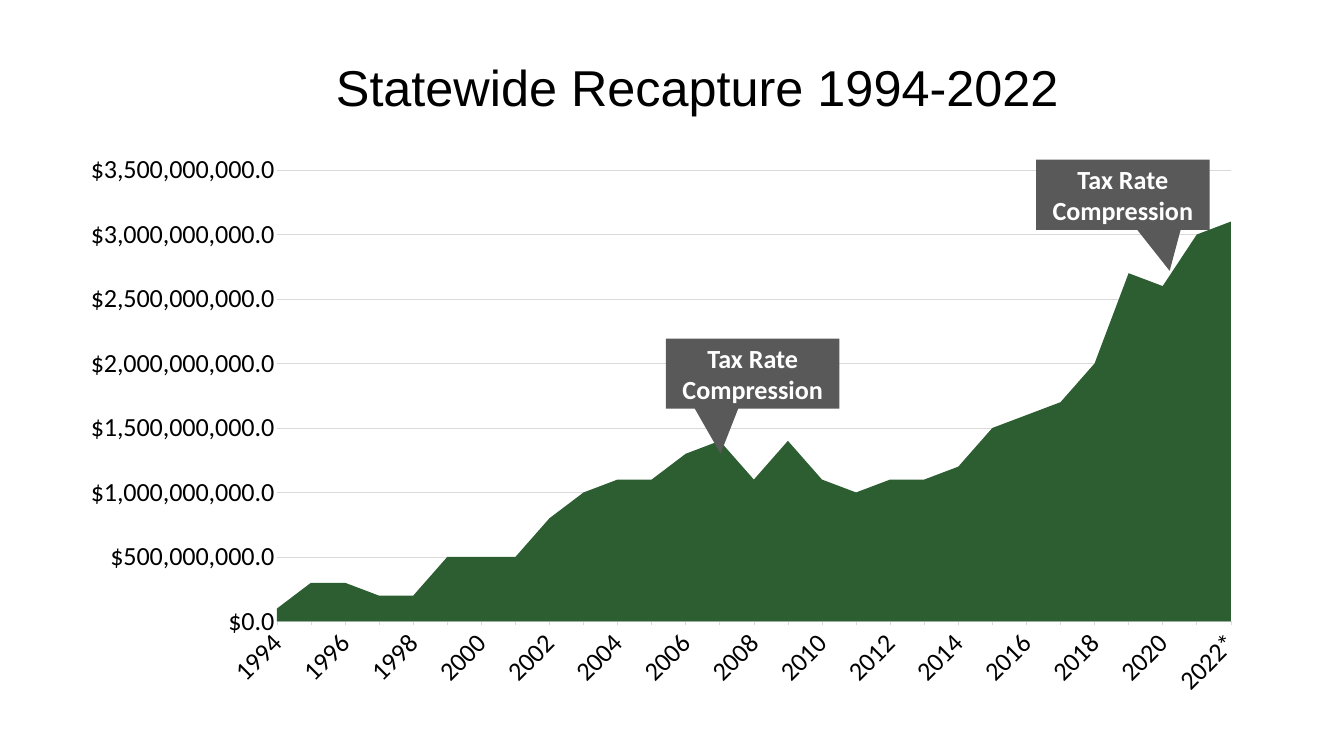
from pptx import Presentation
from pptx.chart.data import CategoryChartData as Data
from pptx.dml.color import RGBColor as RGB
from pptx.enum.chart import XL_CHART_TYPE as Kind, XL_TICK_MARK as Tick
from pptx.enum.shapes import MSO_SHAPE as Form
from pptx.enum.text import MSO_ANCHOR as Anchor, PP_ALIGN as Align
from pptx.oxml import parse_xml
from pptx.oxml.ns import nsdecls
from pptx.util import Cm, Pt

HUES = {"ink": "000000", "area": "2C5E32", "note": "595959", "grid": "D9D9D9", "paper": "FFFFFF"}
YEARS = [str(year) for year in range(1994, 2022)] + ["2022*"]
MILLIONS = [
    100, 300, 300, 200, 200, 500, 500, 500, 800, 1000,
    1100, 1100, 1300, 1400, 1100, 1400, 1100, 1000, 1100, 1100,
    1200, 1500, 1600, 1700, 2000, 2700, 2600, 3000, 3100,
]


def hue(name):
    return RGB.from_string(HUES[name])


def style(font, face, size, tint, bold=False):
    font.name, font.size, font.bold = face, Pt(size), bold
    font.color.rgb = hue(tint)


def write(shape, text, face, size, tint, bold=False):
    frame = shape.text_frame
    frame.word_wrap = True
    frame.vertical_anchor = Anchor.MIDDLE
    frame.margin_top = frame.margin_bottom = 0
    line = frame.paragraphs[0]
    line.alignment = Align.CENTER
    run = line.add_run()
    run.text = text
    style(run.font, face, size, tint, bold)


def add_title(slide, box):
    title = slide.shapes.title
    title.left, title.top, title.width, title.height = [Cm(n) for n in box]
    write(title, "Statewide Recapture 1994-2022", "Arial", 54, "ink")


def rule(form):
    form.line.color.rgb = hue("grid")
    form.line.width = Pt(0.75)


def set_plot(chart, x, y, w, h):
    area = chart.plots[0]._element.getparent()
    for old in area.xpath("c:layout"):
        area.remove(old)
    spots = "".join(f'<c:{tag} val="{val}"/>' for tag, val in zip("xywh", (x, y, w, h)))
    area.insert(0, parse_xml(
        f'<c:layout {nsdecls("c")}><c:manualLayout><c:layoutTarget val="inner"/>'
        f'<c:xMode val="edge"/><c:yMode val="edge"/>{spots}</c:manualLayout></c:layout>'))


def add_graph(slide, box):
    data = Data(number_format="General")
    data.categories = YEARS
    data.add_series("Series 1", [n * 10**6 for n in MILLIONS])
    chart = slide.shapes.add_chart(Kind.AREA_STACKED, *[Cm(n) for n in box], data).chart
    chart.has_legend = chart.has_title = False
    style(chart.font, "Calibri", 10, "ink")
    plot = chart.plots[0]
    plot.vary_by_categories = False
    fill = plot.series[0].format.fill
    fill.solid()
    fill.fore_color.rgb = hue("area")

    years, money = chart.category_axis, chart.value_axis
    for axis in (years, money):
        axis.minor_tick_mark = Tick.NONE
        style(axis.tick_labels.font, "Calibri", 28, "ink")
    years.has_major_gridlines = False
    years.major_tick_mark = Tick.OUTSIDE
    rule(years.format)
    years._element.txPr.bodyPr.set("rot", "-2700000")
    last = years._element.xpath("c:noMultiLvlLbl")[0]
    last.addprevious(parse_xml(f'<c:tickLblSkip {nsdecls("c")} val="2"/>'))

    money.minimum_scale, money.maximum_scale, money.major_unit = 0, 3.5e9, 5e8
    money.major_tick_mark = Tick.NONE
    money.has_major_gridlines = True
    rule(money.major_gridlines.format)
    money.format.line.fill.background()
    money.tick_labels.number_format = '"$"#,##0.0'
    money.tick_labels.number_format_is_linked = False
    for cross in money._element.xpath("c:crossBetween"):
        cross.set("val", "midCat")
    set_plot(chart, 0.175, 0.049, 0.796, 0.798)


def add_note(slide, box, tip):
    note = slide.shapes.add_shape(Form.RECTANGULAR_CALLOUT, *[Cm(n) for n in box])
    note.shadow.inherit = False
    note.fill.solid()
    note.fill.fore_color.rgb = hue("note")
    note.line.fill.background()
    for i, shift in enumerate(tip):
        note.adjustments[i] = shift
    write(note, "Tax Rate Compression", "Calibri", 28, "paper", True)


def main():
    deck = Presentation()
    deck.slide_width, deck.slide_height = Cm(50.8), Cm(28.58)
    slide = deck.slides.add_slide(deck.slide_layouts[5])
    add_title(slide, (5.72, 1.98, 41.28, 2.57))
    add_graph(slide, (2.54, 5.38, 45.3, 21.39))
    wide, high = 6.56, 2.65
    add_note(slide, (25.17, 12.8, wide, high), (-0.185, 1.142))
    add_note(slide, (39.16, 6.04, wide, high), (0.27, 1.085))
    deck.save("out.pptx")


if __name__ == "__main__":
    main()
